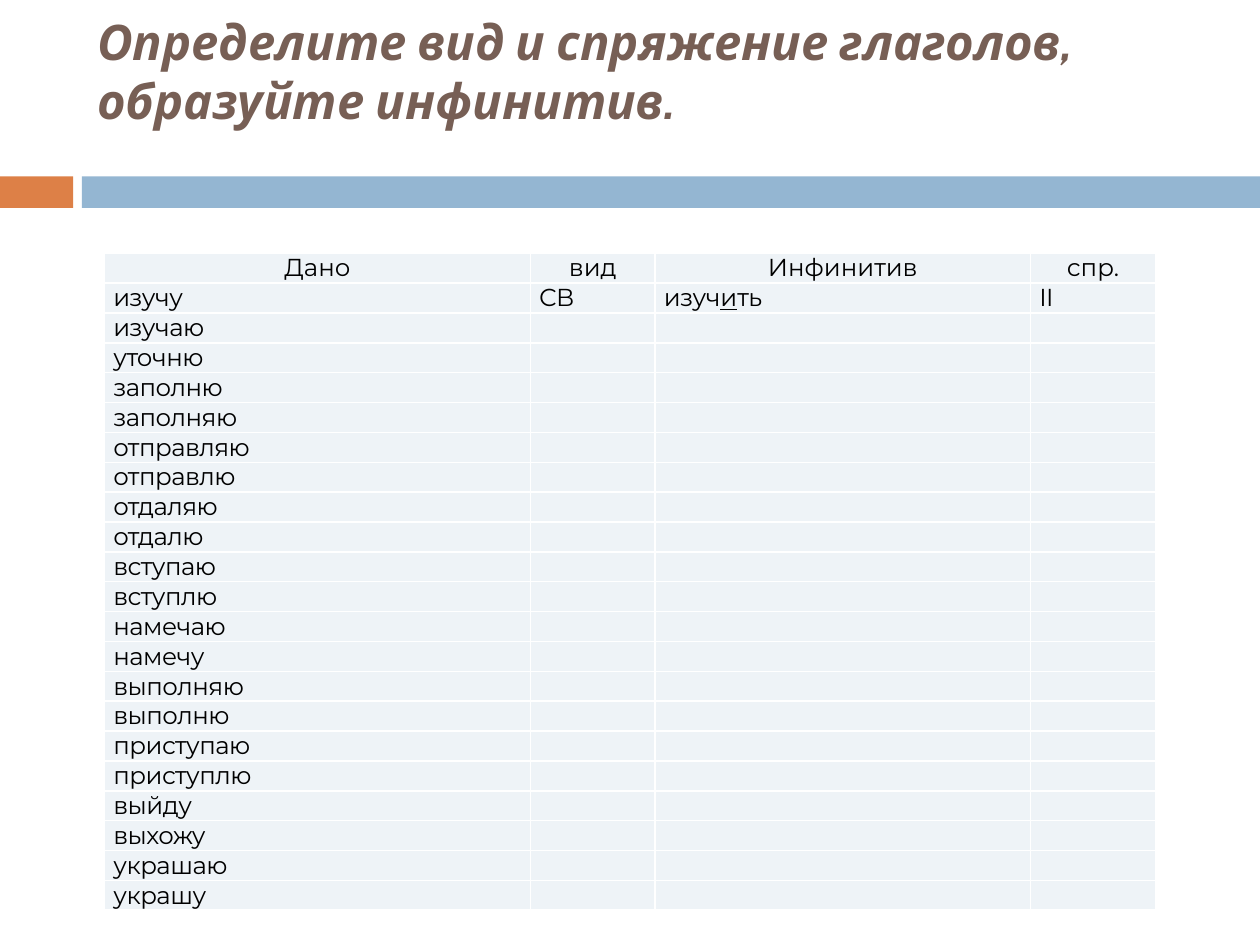
from lxml import etree
from pptx import Presentation
from pptx.dml.color import RGBColor
from pptx.enum.shapes import MSO_SHAPE
from pptx.enum.text import MSO_ANCHOR, PP_ALIGN
from pptx.oxml.ns import qn
from pptx.util import Inches, Pt

RECTANGLE = MSO_SHAPE.RECTANGLE
MIDDLE = MSO_ANCHOR.MIDDLE
LEFT, CENTER, JUSTIFY = PP_ALIGN.LEFT, PP_ALIGN.CENTER, PP_ALIGN.JUSTIFY

COLORS = {
    "title": "775F55",
    "accent": "DD8047",
    "band": "94B6D2",
    "cell": "EEF3F7",
    "border": "FFFFFF",
    "text": "000000",
}
TITLE_FONT, TABLE_FONT = "Cabin", "Montserrat"
TITLE_SIZE, TABLE_SIZE = 28, 14

TITLE = "Определите вид и спряжение глаголов, образуйте инфинитив.\v"
HEADERS = ["Дано", "вид", "Инфинитив", "спр."]
VERBS = [
    "изучу", "изучаю", "уточню", "заполню", "заполняю", "отправляю",
    "отправлю", "отдаляю", "отдалю", "вступаю", "вступлю", "намечаю",
    "намечу", "выполняю", "выполню", "приступаю", "приступлю", "выйду",
    "выхожу", "украшаю", "украшу",
]
# Each cell is a list of spans; the middle span of the infinitive is underlined.
EXAMPLE = [["СВ"], ["изуч", "и", "ть"], ["II"]]
COLUMN_WIDTHS = [3.38, 0.99, 2.98, 0.99]
TABLE_HEIGHT = 5.13


def color(name):
    return RGBColor.from_string(COLORS[name])


def set_end_size(para, size):
    """Give the empty end of a paragraph its text size."""
    end = etree.SubElement(para._p, qn("a:endParaRPr"))
    end.set("sz", str(size * 100))


def format_font(font, name, size, color_name):
    font.name = name
    font.size = Pt(size)
    font.color.rgb = color(color_name)


def add_title(slide):
    title = slide.shapes.title
    title.left, title.top = Inches(0.67), Inches(0.25)
    title.width, title.height = Inches(8.92), Inches(1.08)
    frame = title.text_frame
    frame.text = TITLE
    frame.word_wrap = True
    frame.vertical_anchor = MIDDLE
    para = frame.paragraphs[0]
    para.alignment = LEFT
    for span in para.runs:
        format_font(span.font, TITLE_FONT, TITLE_SIZE, "title")
        span.font.bold = span.font.italic = True
    set_end_size(para, TITLE_SIZE)


def add_band(slide, left, width, color_name):
    band = slide.shapes.add_shape(
        RECTANGLE, Inches(left), Inches(1.4), Inches(width), Inches(0.25))
    band.shadow.inherit = False
    band.fill.solid()
    band.fill.fore_color.rgb = color(color_name)
    band.line.fill.background()


def set_borders(cell):
    properties = cell._tc.get_or_add_tcPr()
    for index, side in enumerate(("lnL", "lnR", "lnT", "lnB")):
        line = etree.Element(qn(f"a:{side}"), w=str(Pt(1)))
        fill = etree.SubElement(line, qn("a:solidFill"))
        etree.SubElement(fill, qn("a:srgbClr"), val=COLORS["border"])
        properties.insert(index, line)


def fill_cell(cell, spans, is_header):
    cell.margin_left = cell.margin_right = Inches(0.07)
    cell.margin_top = cell.margin_bottom = 0
    cell.fill.solid()
    cell.fill.fore_color.rgb = color("cell")
    set_borders(cell)
    para = cell.text_frame.paragraphs[0]
    para.alignment = CENTER if is_header else JUSTIFY
    for index, text in enumerate(spans):
        span = para.add_run()
        span.text = text
        format_font(span.font, TABLE_FONT, TABLE_SIZE, "text")
        if index == 1:
            span.font.underline = True
        if not is_header:
            span.font._element.set("spc", "-30")
    set_end_size(para, TABLE_SIZE)


def add_verb_table(slide):
    blank = [[]] * len(EXAMPLE)
    rows = [[[header] for header in HEADERS]]
    rows += [[[verb]] + (blank if index else EXAMPLE)
             for index, verb in enumerate(VERBS)]
    table = slide.shapes.add_table(
        len(rows), len(HEADERS), Inches(0.83), Inches(2.01),
        Inches(sum(COLUMN_WIDTHS)), Inches(TABLE_HEIGHT)).table
    for column, width in zip(table.columns, COLUMN_WIDTHS):
        column.width = Inches(width)
    for row_index, row in enumerate(rows):
        for column_index, spans in enumerate(row):
            fill_cell(table.cell(row_index, column_index), spans, row_index == 0)


def main():
    deck = Presentation()
    deck.slide_width, deck.slide_height = Inches(10), Inches(7.5)
    slide = deck.slides.add_slide(deck.slide_layouts.get_by_name("Title Only"))
    add_band(slide, 0, 0.58, "accent")
    add_band(slide, 0.65, 9.35, "band")
    add_title(slide)
    add_verb_table(slide)
    deck.save("out.pptx")


if __name__ == "__main__":
    main()
